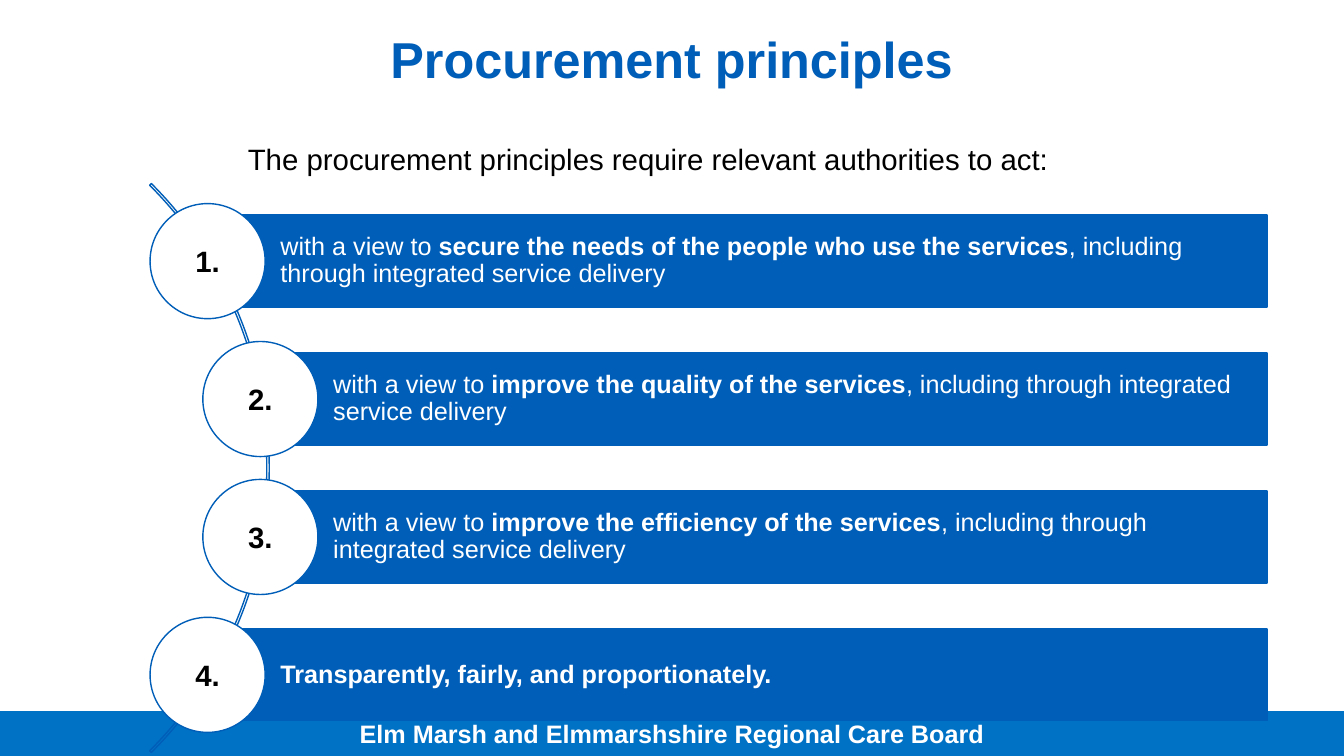
from pptx import Presentation
from pptx.dml.color import RGBColor
from pptx.enum.shapes import MSO_SHAPE
from pptx.enum.text import MSO_ANCHOR, MSO_AUTO_SIZE, PP_ALIGN
from pptx.util import Pt

TITLE = "Procurement principles"
INTRO = "The procurement principles require relevant authorities to act:"
FOOTER = "Elm Marsh and Elmmarshshire Regional Care Board"
# Each principle is a list of (text, bold) runs
VIEW = ("with a view to ", False)
DELIVERY = (", including through integrated service delivery", False)
PRINCIPLES = [
    [VIEW, ("secure the needs of the people who use the services", True), DELIVERY],
    [VIEW, ("improve the quality of the services", True), DELIVERY],
    [VIEW, ("improve the efficiency of the services", True), DELIVERY],
    [("Transparently, fairly, and proportionately.", True)],
]
BLUE, FOOTER_BLUE, WHITE, BLACK = "005EB8", "0072C6", "FFFFFF", "000000"

WIDTH, HEIGHT = 960, 540
BAR_LEFTS = [148.3, 186, 186, 148.3]  # follow the curve of the arc
BAR_RIGHT, BAR_TOP, BAR_HEIGHT, PITCH = 905, 153.7, 65.7, 98.5
CIRCLE, ARC = 82.2, 574.6
ARC_LEFT = -382.3


def color(value):
    return RGBColor.from_string(value)


def add_shape(kind, left, top, width, height, fill, line):
    sp = s.shapes.add_shape(kind, Pt(left), Pt(top), Pt(width), Pt(height))
    sp.shadow.inherit = False
    if fill:
        sp.fill.solid()
        sp.fill.fore_color.rgb = color(fill)
    else:
        sp.fill.background()
    sp.line.color.rgb = color(line)
    sp.line.width = Pt(1)
    return sp


def write(sp, runs, size, text_color, align=PP_ALIGN.LEFT):
    """Fill the shape with one paragraph of (text, bold) runs."""
    tf = sp.text_frame
    tf.word_wrap = True
    tf.auto_size = MSO_AUTO_SIZE.NONE
    tf.vertical_anchor = MSO_ANCHOR.MIDDLE
    p = tf.paragraphs[0]
    p.alignment = align
    p.font.name = "Arial"
    p.font.size = Pt(size)
    p.font.color.rgb = color(text_color)
    for text, bold in runs:
        r = p.add_run()
        r.text = text
        r.font.bold = bold
    return tf


prs = Presentation()
prs.slide_width, prs.slide_height = Pt(WIDTH), Pt(HEIGHT)
s = prs.slides.add_slide(prs.slide_layouts[5])

title = s.shapes.title
title.left, title.top, title.width, title.height = Pt(233.3), Pt(5.8), Pt(493.2), Pt(71.3)
write(title, [(TITLE, True)], 36, BLUE, PP_ALIGN.CENTER)

footer = add_shape(MSO_SHAPE.RECTANGLE, 0, 508.3, WIDTH, HEIGHT - 508.3, FOOTER_BLUE, FOOTER_BLUE)
write(footer, [(FOOTER, True)], 18, WHITE, PP_ALIGN.CENTER)

intro = s.shapes.add_textbox(Pt(169.9), Pt(100.1), Pt(616.3), Pt(41.8))
tf = write(intro, [(INTRO, False)], 21, BLACK)
tf.vertical_anchor = MSO_ANCHOR.TOP
tf.paragraphs[0].line_spacing = 0.9

stack_middle = BAR_TOP + (PITCH * (len(PRINCIPLES) - 1) + BAR_HEIGHT) / 2
arc = add_shape(MSO_SHAPE.BLOCK_ARC, ARC_LEFT, stack_middle - ARC / 2, ARC, ARC, None, BLUE)
for i, value in enumerate((189, 27, 0.003)):
    arc.adjustments[i] = value

for i, (runs, left) in enumerate(zip(PRINCIPLES, BAR_LEFTS)):
    top = BAR_TOP + i * PITCH
    bar = add_shape(MSO_SHAPE.RECTANGLE, left, top, BAR_RIGHT - left, BAR_HEIGHT, BLUE, BLUE)
    tf = write(bar, runs, 18, WHITE)
    tf.margin_left = Pt(52)
    tf.margin_right = tf.margin_top = tf.margin_bottom = Pt(3.6)
    tf.paragraphs[0].line_spacing = 0.9

    circle = add_shape(MSO_SHAPE.OVAL, left - CIRCLE / 2, top + (BAR_HEIGHT - CIRCLE) / 2,
                       CIRCLE, CIRCLE, WHITE, BLUE)
    write(circle, [(f"{i + 1}.", True)], 21, BLACK, PP_ALIGN.CENTER)

prs.save("out.pptx")
